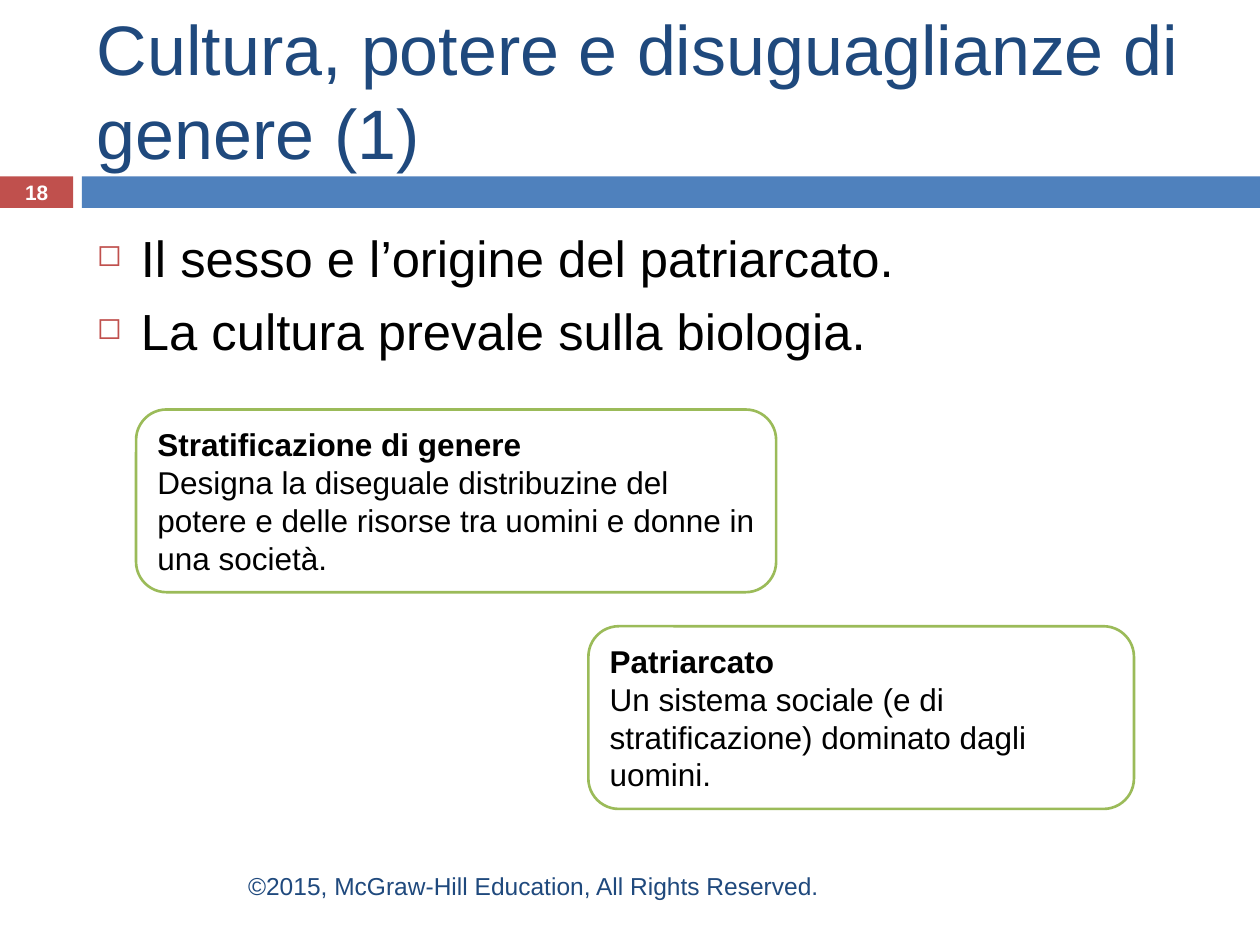
import pptx
import pptx.dml.color
import pptx.enum.shapes
import pptx.enum.text
import pptx.oxml
import pptx.oxml.ns
import pptx.util

RGBColor = pptx.dml.color.RGBColor
NAVY = RGBColor(0x1F, 0x49, 0x7D)
BLUE = RGBColor(0x4F, 0x81, 0xBD)
RED = RGBColor(0xC0, 0x50, 0x4D)
GREEN = RGBColor(0x9B, 0xBB, 0x59)
BLACK = RGBColor(0, 0, 0)
WHITE = RGBColor(0xFF, 0xFF, 0xFF)

WIDTH, HEIGHT = 10, 7.5
LEFT = 0.67
CONTENT_WIDTH = 8.92
CARD_HEIGHT = 1.45
BAND_TOP, BAND_HEIGHT = 1.4, 0.25
NUMBER_WIDTH, BAND_LEFT = 0.58, 0.65

SHAPES = pptx.enum.shapes.MSO_SHAPE
ALIGN = pptx.enum.text.PP_ALIGN
ANCHOR = pptx.enum.text.MSO_ANCHOR


def inches(box):
    return [pptx.util.Inches(length) for length in box]


def apply_format(target, values):
    for name, value in values.items():
        setattr(target, name, value)


def write_para(para, text, size, color, bold=False, align=ALIGN.LEFT):
    para.alignment = align
    span = para.add_run()
    span.text = text
    apply_format(span.font, {"name": "Arial", "size": pptx.util.Pt(size), "bold": bold})
    span.font.color.rgb = color


def add_text(slide, box, anchor):
    frame = slide.shapes.add_textbox(*inches(box)).text_frame
    apply_format(frame, {"word_wrap": True, "vertical_anchor": anchor})
    return frame


def add_block(slide, kind, box, fill):
    shape = slide.shapes.add_shape(kind, *inches(box))
    shape.shadow.inherit = False
    shape.fill.solid()
    shape.fill.fore_color.rgb = fill
    shape.line.fill.background()
    return shape


def add_bullet(para):
    props = para._p.get_or_add_pPr()
    apply_format(props, {})
    props.set("marL", str(pptx.util.Inches(0.35)))
    props.set("indent", str(pptx.util.Inches(-0.35)))
    namespace = pptx.oxml.ns.nsdecls("a")
    for markup in (
        f'<a:buClr {namespace}><a:srgbClr val="{RED}"/></a:buClr>',
        f'<a:buSzPct {namespace} val="60000"/>',
        f'<a:buChar {namespace} char="◻"/>',
    ):
        props.append(pptx.oxml.parse_xml(markup))


def add_title(slide, box, text):
    frame = add_text(slide, box, ANCHOR.MIDDLE)
    write_para(frame.paragraphs[0], text, 40, NAVY)


def add_band(slide, box, number):
    left, top, width, height = box
    badge = add_block(slide, SHAPES.RECTANGLE, (left, top, NUMBER_WIDTH, height), RED)
    margins = ("margin_left", "margin_top", "margin_right", "margin_bottom")
    apply_format(badge.text_frame, dict.fromkeys(margins, 0))
    badge.text_frame.vertical_anchor = ANCHOR.MIDDLE
    write_para(badge.text_frame.paragraphs[0], number, 11.9, WHITE, True, ALIGN.CENTER)
    add_block(slide, SHAPES.RECTANGLE, (left + BAND_LEFT, top, width - BAND_LEFT, height), BLUE)


def add_bullets(slide, box, lines):
    frame = add_text(slide, box, ANCHOR.TOP)
    for index, line in enumerate(lines):
        para = frame.add_paragraph() if index else frame.paragraphs[0]
        if index:
            para.space_before = pptx.util.Pt(7)
        add_bullet(para)
        write_para(para, line, 29, BLACK)


def add_card(slide, box, term, definition):
    card = add_block(slide, SHAPES.ROUNDED_RECTANGLE, box, WHITE)
    card.line.color.rgb = GREEN
    card.line.width = pptx.util.Pt(1.5)
    frame = card.text_frame
    apply_format(frame, {"word_wrap": True, "vertical_anchor": ANCHOR.MIDDLE})
    write_para(frame.paragraphs[0], term, 18, BLACK, True)
    write_para(frame.add_paragraph(), definition, 18, BLACK)


def add_footer(slide, box, text):
    frame = add_text(slide, box, ANCHOR.MIDDLE)
    write_para(frame.paragraphs[0], text, 14, NAVY, align=ALIGN.RIGHT)


def main():
    deck = pptx.Presentation()
    deck.slide_width, deck.slide_height = inches((WIDTH, HEIGHT))
    slide = deck.slides.add_slide(deck.slide_layouts[6])
    add_band(slide, (0, BAND_TOP, WIDTH, BAND_HEIGHT), "18")
    add_title(slide, (LEFT, 0.17, CONTENT_WIDTH, 1.08),
              "Cultura, potere e disuguaglianze di genere (1)")
    add_bullets(slide, (LEFT, 1.75, CONTENT_WIDTH, 4.92),
                ("Il sesso e l’origine del patriarcato.",
                 "La cultura prevale sulla biologia."))
    add_card(slide, (1.08, 3.25, 5.08, CARD_HEIGHT), "Stratificazione di genere",
             "Designa la diseguale distribuzine del potere e delle risorse "
             "tra uomini e donne in una società.")
    add_card(slide, (4.67, 4.97, 4.33, CARD_HEIGHT), "Patriarcato",
             "Un sistema sociale (e di stratificazione) dominato dagli uomini.")
    add_footer(slide, (LEFT, 6.83, 5.93, 0.4),
               "©2015, McGraw-Hill Education, All Rights Reserved.")
    deck.save("out.pptx")


if __name__ == "__main__":
    main()
